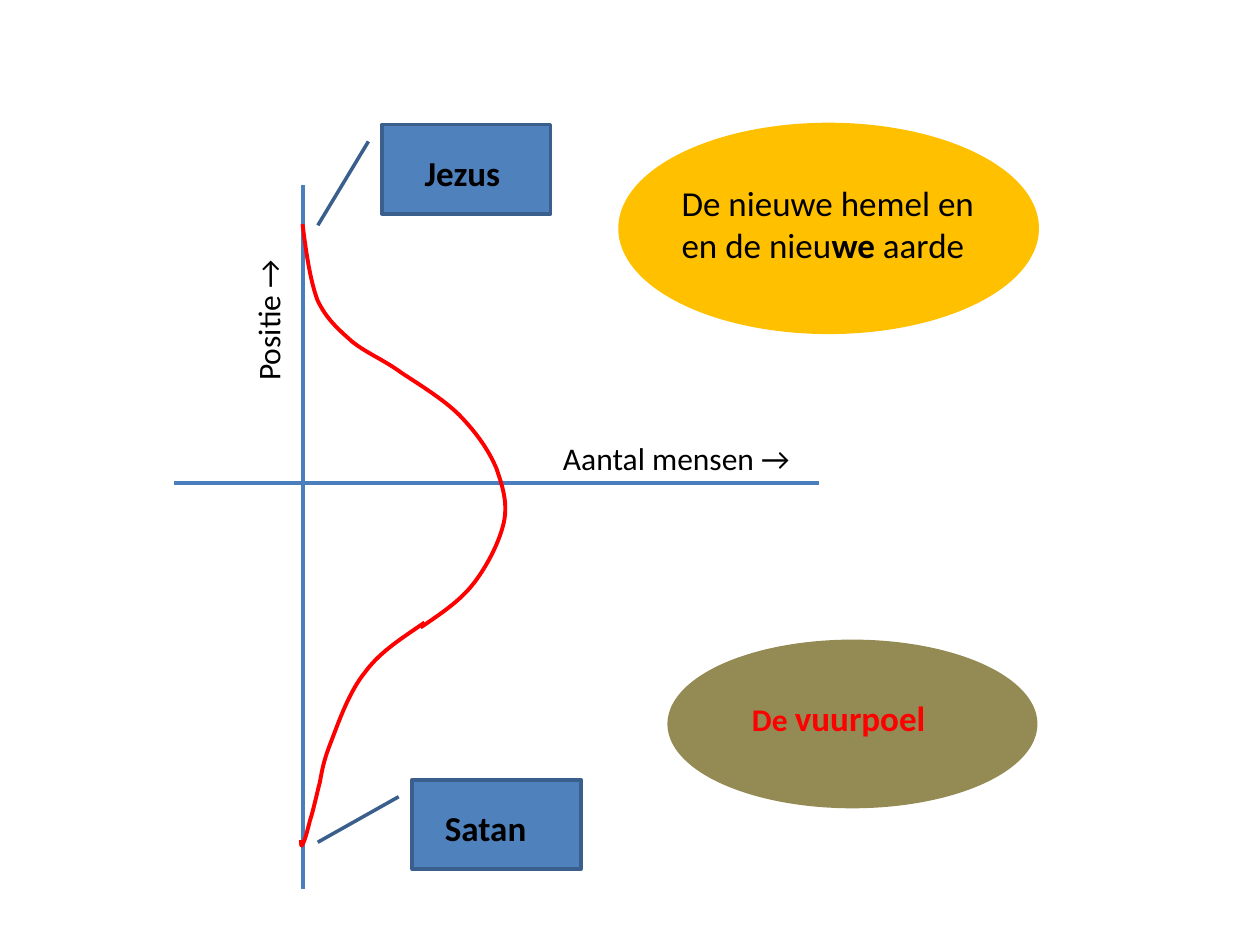
from dataclasses import dataclass
from itertools import pairwise

from lxml import etree
from pptx import Presentation
from pptx import util as u
from pptx.dml.color import RGBColor
from pptx.enum import shapes, text
from pptx.oxml.ns import qn


@dataclass(frozen=True)
class Theme:
    font: str = "Calibri"
    small: float = 18
    large: float = 20
    ink: str = "000000"
    axis: str = "4B7EBC"
    red: str = "FF0000"
    heaven: str = "FFC000"
    lake: str = "948A54"
    callout: str = "4F81BD"
    callout_edge: str = "3A5F8C"
    stroke: float = 2.25
    edge: float = 2


THEME = Theme()

# Curve points in cm from the top of the curve: a start, then three per Bézier arc
UPPER_CURVE = [
    (0, 0),
    (.07, .56), (.15, 1.12), (.3, 1.53),
    (.48, 1.91), (.71, 2.11), (.99, 2.36),
    (1.27, 2.59), (1.65, 2.74), (2, 3),
    (2.38, 3.25), (2.92, 3.58), (3.22, 3.91),
    (3.53, 4.24), (3.76, 4.57), (3.91, 4.93),
    (4.03, 5.28), (4.14, 5.61), (4.06, 6),
    (3.98, 6.38), (3.73, 6.88), (3.45, 7.24),
    (3.17, 7.6), (2.79, 7.85), (2.38, 8.13),
]
LOWER_CURVE = [
    (2.46, 8.03),
    (2.03, 8.33), (1.57, 8.61), (1.27, 9.02),
    (.94, 9.42), (.73, 10.03), (.58, 10.42),
    (.43, 10.8), (.4, 10.97), (.35, 11.25),
    (.28, 11.51), (.22, 11.81), (.15, 12.02),
    (.1, 12.22), (.05, 12.42), (0, 12.5),
    (-.03, 12.57), (-.03, 12.5), (-.03, 12.42),
]


def cm(*lengths):
    return [u.Cm(length) for length in lengths]


def style_line(line, color, width):
    line.color.rgb = RGBColor.from_string(color)
    line.width = u.Pt(width)


def add_label(parent, box, paragraphs, rotation=0):
    """Each paragraph is a list of runs: (words, size, color, bold)."""
    label = parent.add_textbox(*cm(*box))
    label.rotation = rotation
    frame = label.text_frame
    frame.word_wrap = True
    frame.auto_size = text.MSO_AUTO_SIZE.SHAPE_TO_FIT_TEXT
    for number, runs in enumerate(paragraphs):
        paragraph = frame.add_paragraph() if number else frame.paragraphs[0]
        for words, size, color, bold in runs:
            run = paragraph.add_run()
            run.text = words
            run.font.name = THEME.font
            run.font.size = u.Pt(size)
            run.font.bold = bold
            run.font.color.rgb = RGBColor.from_string(color)


def add_filled(parent, kind, box, fill, edge):
    shape = parent.add_shape(kind, *cm(*box))
    shape.shadow.inherit = False
    shape.fill.solid()
    shape.fill.fore_color.rgb = RGBColor.from_string(fill)
    style_line(shape.line, edge, THEME.edge)
    return shape


def add_axis(parent, start, end):
    axis = parent.add_connector(shapes.MSO_CONNECTOR.STRAIGHT, *cm(*start, *end))
    style_line(axis.line, THEME.axis, THEME.stroke)
    etree.SubElement(axis._element.spPr, qn("a:effectLst"))


def add_curve(parent, left, top, points):
    start, *rest = [cm(left + x, top + y) for x, y in points]
    builder = parent.build_freeform(*start)
    builder.add_line_segments(rest, close=False)
    curve = builder.convert_to_shape()
    curve.shadow.inherit = False
    curve.fill.background()
    style_line(curve.line, THEME.red, THEME.stroke)
    # Join every three straight segments into one Bézier arc
    outline = next(curve._element.iter(qn("a:path")))
    segments = outline.findall(qn("a:lnTo"))
    cuts = range(0, len(segments) + 1, 3)
    for first, last in pairwise(cuts):
        arc = etree.SubElement(outline, qn("a:cubicBezTo"))
        for segment in segments[first:last]:
            arc.append(segment[0])
            outline.remove(segment)


def add_graph(parent, left, top, width, height):
    # Axes
    position_x, people_y = left + 2.59, top + 6
    add_axis(parent, (position_x, top), (position_x, top + height))
    add_axis(parent, (left, people_y), (left + width, people_y))
    # Distribution of people
    for points in (UPPER_CURVE, LOWER_CURVE):
        add_curve(parent, position_x, top + .79, points)
    # Axis names
    add_label(parent, (left + 7.59, people_y - 1, 5.41, 1.02),
              [[("Aantal mensen →", THEME.small, THEME.ink, False)]])
    add_label(parent, (left - 1, top + .79, 5.79, 1.02),
              [[("Positie →", THEME.small, THEME.ink, False)]], rotation=270)


def add_destination(parent, box, color, inset, size, paragraphs):
    group = parent.add_group_shape().shapes
    add_filled(group, shapes.MSO_SHAPE.OVAL, box, color, color)
    add_label(group, (box[0] + inset[0], box[1] + inset[1], *size), paragraphs)


def add_callout(parent, left, top, name, indent, pointer):
    callout = add_filled(parent, shapes.MSO_SHAPE.LINE_CALLOUT_1,
                         (left, top, 3.4, 1.8), THEME.callout, THEME.callout_edge)
    for index, value in enumerate(pointer):
        callout.adjustments[index] = value
    add_label(parent, (left + indent, top + .41, 2.79, 1.12),
              [[(name, THEME.large, THEME.ink, True)]])


def main():
    deck = Presentation()
    deck.slide_width, deck.slide_height = cm(25.4, 19.05)
    parts = deck.slides.add_slide(deck.slide_layouts[6]).shapes

    add_graph(parts, 3.51, 3.73, 13, 14.2)

    # Destinations
    add_destination(parts, (12.5, 2.51, 8.41, 4.19), THEME.heaven, (.99, 1.02), (6.81, 1.96), [
        [("De nieuwe hemel en", THEME.large, THEME.ink, False)],
        [("en de nieu", THEME.large, THEME.ink, False),
         ("we ", THEME.large, THEME.ink, True),
         ("aarde", THEME.large, THEME.ink, False)],
    ])
    add_destination(parts, (13.49, 12.93, 7.39, 3.33), THEME.lake, (1.42, .99), (4.6, 1.12), [
        [("De ", THEME.small, THEME.red, True), ("vuurpoel", THEME.large, THEME.red, True)],
    ])

    # Both ends of the curve
    add_callout(parts, 7.7, 2.51, "Jezus", .61, (.19, -.08, 1.13, -.38))
    add_callout(parts, 8.31, 15.72, "Satan", .41, (.19, -.08, .7, -.56))

    deck.save("out.pptx")


if __name__ == "__main__":
    main()
